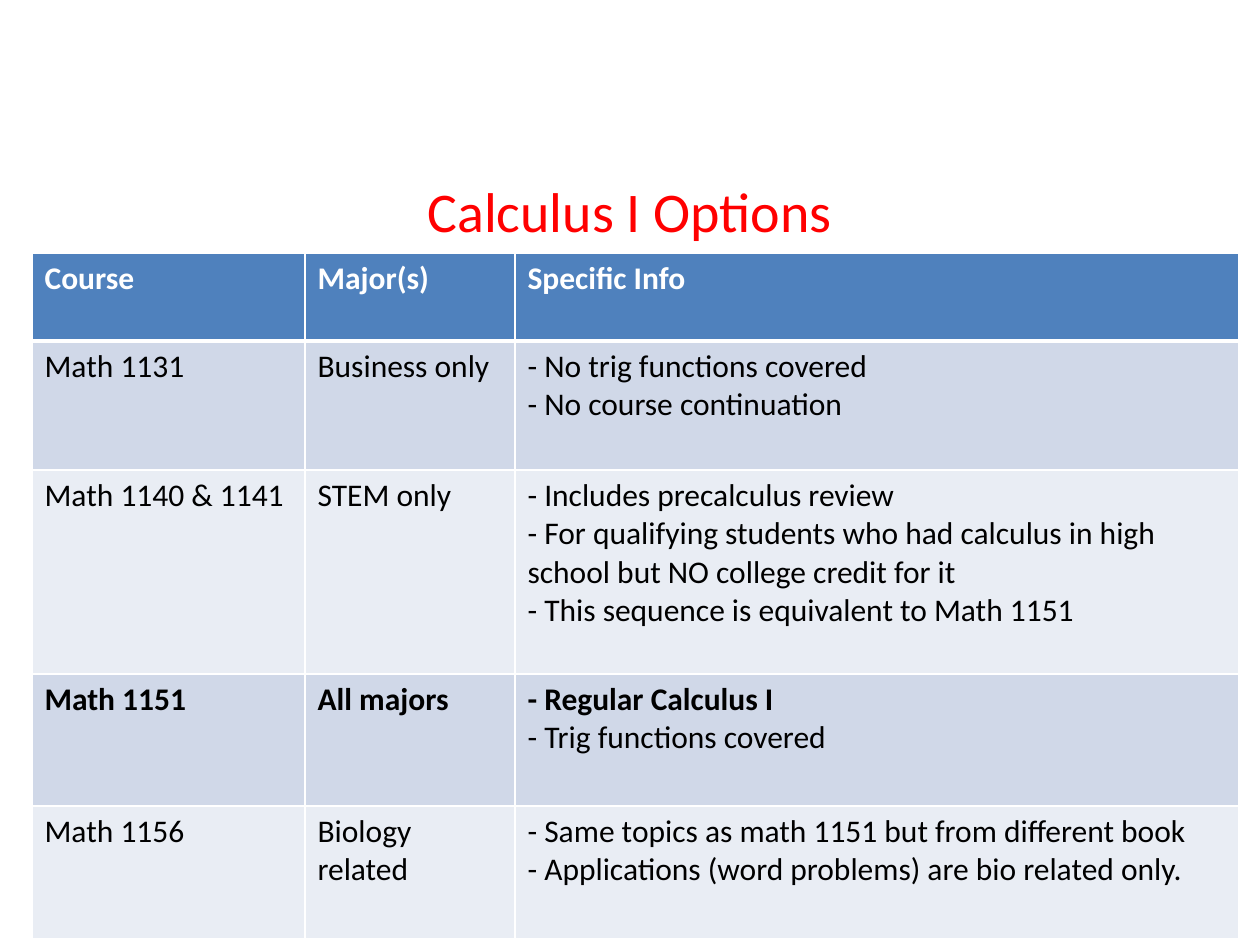
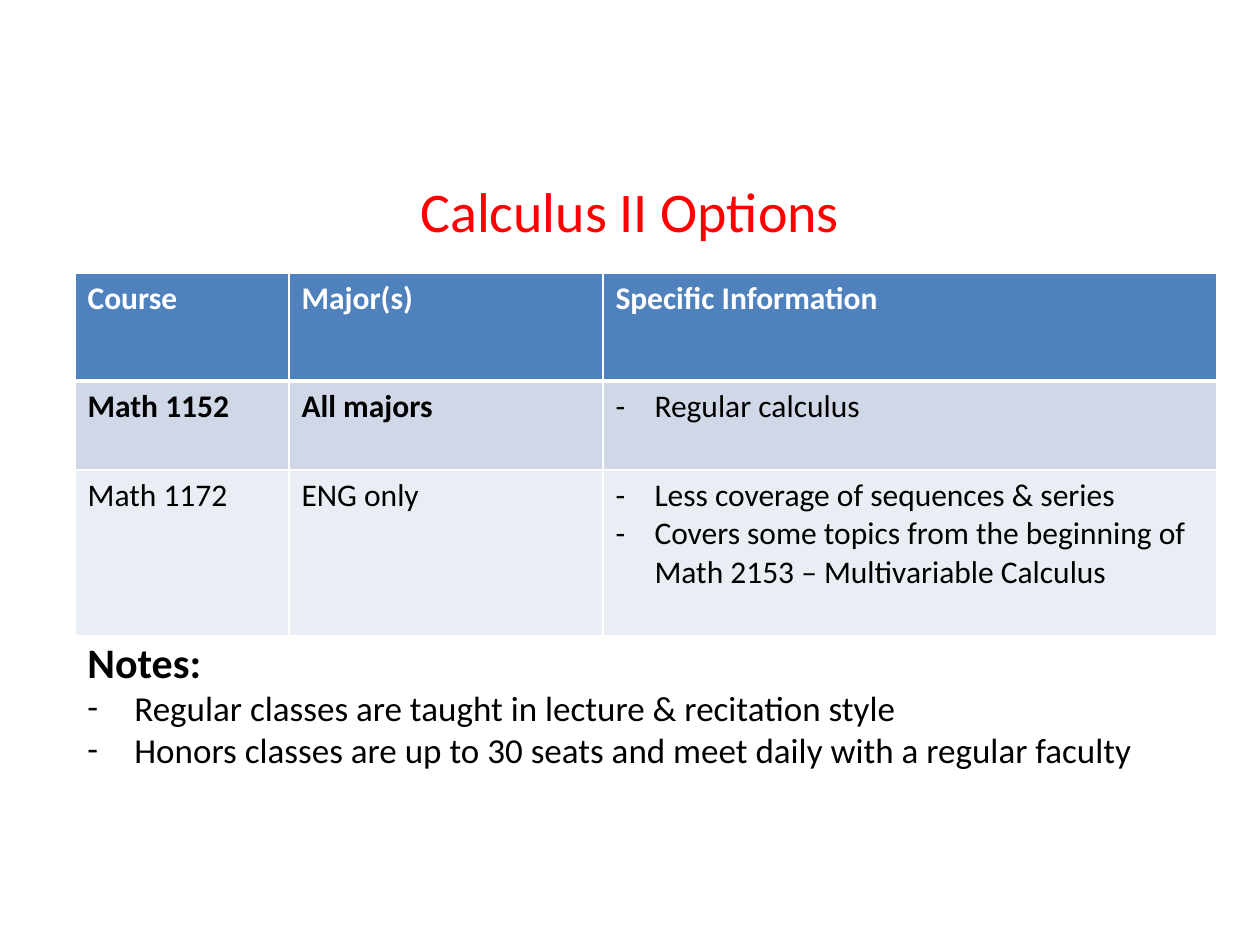
from lxml import etree
from pptx import Presentation
from pptx import util as u
from pptx.dml.color import RGBColor
from pptx.enum import text
from pptx.oxml.ns import qn

FONT = "Calibri"
RED = RGBColor(0xFF, 0x00, 0x00)
BLACK = RGBColor(0x00, 0x00, 0x00)
WHITE = RGBColor(0xFF, 0xFF, 0xFF)
HEADER = RGBColor(0x4F, 0x81, 0xBD)
BANDS = [RGBColor(0xE9, 0xED, 0xF4), RGBColor(0xD0, 0xD8, 0xE8)]

SLIDE_SIZE = (1260, 945)
TITLE_BOX = (63, 179, 1134, 63)
NOTES_BOX = (75, 630, 1142, 229)
CELL_INDENT = 39
NOTES_INDENT = 47

CALCULUS_1 = dict(
    title="Calculus I Options",
    origin=(32, 253),
    columns=[273, 210, 724],
    heights=[88, 129, 204, 132, 133],
    indent=0,
    bold=["Math 1151", "All majors", "- Regular Calculus I"],
    rows=[
        ("Course", "Major(s)", ["Specific Info"]),
        ("Math 1131", "Business only",
         ["- No trig functions covered", "- No course continuation"]),
        ("Math 1140 & 1141", "STEM only",
         ["- Includes precalculus review",
          "- For qualifying students who had calculus in high school but NO college credit for it",
          "- This sequence is equivalent to Math 1151"]),
        ("Math 1151", "All majors",
         ["- Regular Calculus I", "- Trig functions covered"]),
        ("Math 1156", "Biology related",
         ["- Same topics as math 1151 but from different book",
          "- Applications (word problems) are bio related only."]),
    ],
)
CALCULUS_2 = dict(
    title="Calculus II Options",
    origin=(75, 273),
    columns=[214, 314, 614],
    heights=[108, 89, 166],
    indent=CELL_INDENT,
    bold=["Math 1152", "All majors"],
    rows=[
        ("Course", "Major(s)", ["Specific Information"]),
        ("Math 1152", "All majors", ["Regular calculus"]),
        ("Math 1172", "ENG only",
         ["Less coverage of sequences & series",
          "Covers some topics from the beginning of Math 2153 – Multivariable Calculus"]),
    ],
)
NOTES_HEADING = "Notes:"
NOTES = [
    "Regular classes are taught in lecture & recitation style",
    "Honors classes are up to 30 seats and meet daily with a regular faculty",
]


def px(n):
    return u.Emu(round(n * 914400 / 126))


def write(tf, content, size=18, color=BLACK, bold=False, indent=0, align=None):
    p = tf.paragraphs[-1]
    if p.runs:
        p = tf.add_paragraph()
    if align is not None:
        p.alignment = align
    if indent:
        pPr = p._p.get_or_add_pPr()
        pPr.set("marL", str(px(indent)))
        pPr.set("indent", str(-px(indent)))
        etree.SubElement(pPr, qn("a:buFont")).set("typeface", FONT)
        etree.SubElement(pPr, qn("a:buChar")).set("char", "-")
    r = p.add_run()
    r.text = content
    r.font.name = FONT
    r.font.size = u.Pt(size)
    r.font.bold = bold
    r.font.color.rgb = color


def add_borders(cell, **widths):
    tcPr = cell._tc.get_or_add_tcPr()
    for side in "LRTB":
        ln = etree.SubElement(tcPr, qn("a:ln" + side))
        ln.set("w", str(u.Pt(widths.get(side, 1))))
        fill = etree.SubElement(ln, qn("a:solidFill"))
        etree.SubElement(fill, qn("a:srgbClr")).set("val", str(WHITE))


def add_title(s, title):
    sp = s.shapes.title
    sp.left, sp.top, sp.width, sp.height = map(px, TITLE_BOX)
    tf = sp.text_frame
    tf.auto_size = text.MSO_AUTO_SIZE.NONE
    tf.vertical_anchor = text.MSO_ANCHOR.MIDDLE
    write(tf, title, size=32, color=RED, align=text.PP_ALIGN.CENTER)


def add_courses(s, course):
    columns, heights, rows = course["columns"], course["heights"], course["rows"]
    box = (*course["origin"], sum(columns), sum(heights))
    table = s.shapes.add_table(len(rows), len(columns), *map(px, box)).table
    for column, width in zip(table.columns, columns):
        column.width = px(width)
    for i, (name, majors, info) in enumerate(rows):
        table.rows[i].height = px(heights[i])
        is_header = i == 0
        for j, lines in enumerate([[name], [majors], info]):
            cell = table.cell(i, j)
            add_borders(cell, T=3 if i == 1 else 1, B=3 if is_header else 1)
            cell.fill.solid()
            cell.fill.fore_color.rgb = HEADER if is_header else BANDS[i % 2]
            for line in lines:
                write(cell.text_frame, line,
                      color=WHITE if is_header else BLACK,
                      bold=is_header or line in course["bold"],
                      indent=course["indent"] if j == 2 and not is_header else 0)


def add_notes(s):
    tf = s.shapes.add_textbox(*map(px, NOTES_BOX)).text_frame
    tf.word_wrap = True
    write(tf, NOTES_HEADING, size=24, bold=True)
    for note in NOTES:
        write(tf, note, size=20, indent=NOTES_INDENT)


def main():
    prs = Presentation()
    prs.slide_width, prs.slide_height = map(px, SLIDE_SIZE)
    for course in (CALCULUS_1, CALCULUS_2):
        s = prs.slides.add_slide(prs.slide_layouts[5])
        add_title(s, course["title"])
        add_courses(s, course)
    add_notes(s)
    prs.save("out.pptx")


if __name__ == "__main__":
    main()
